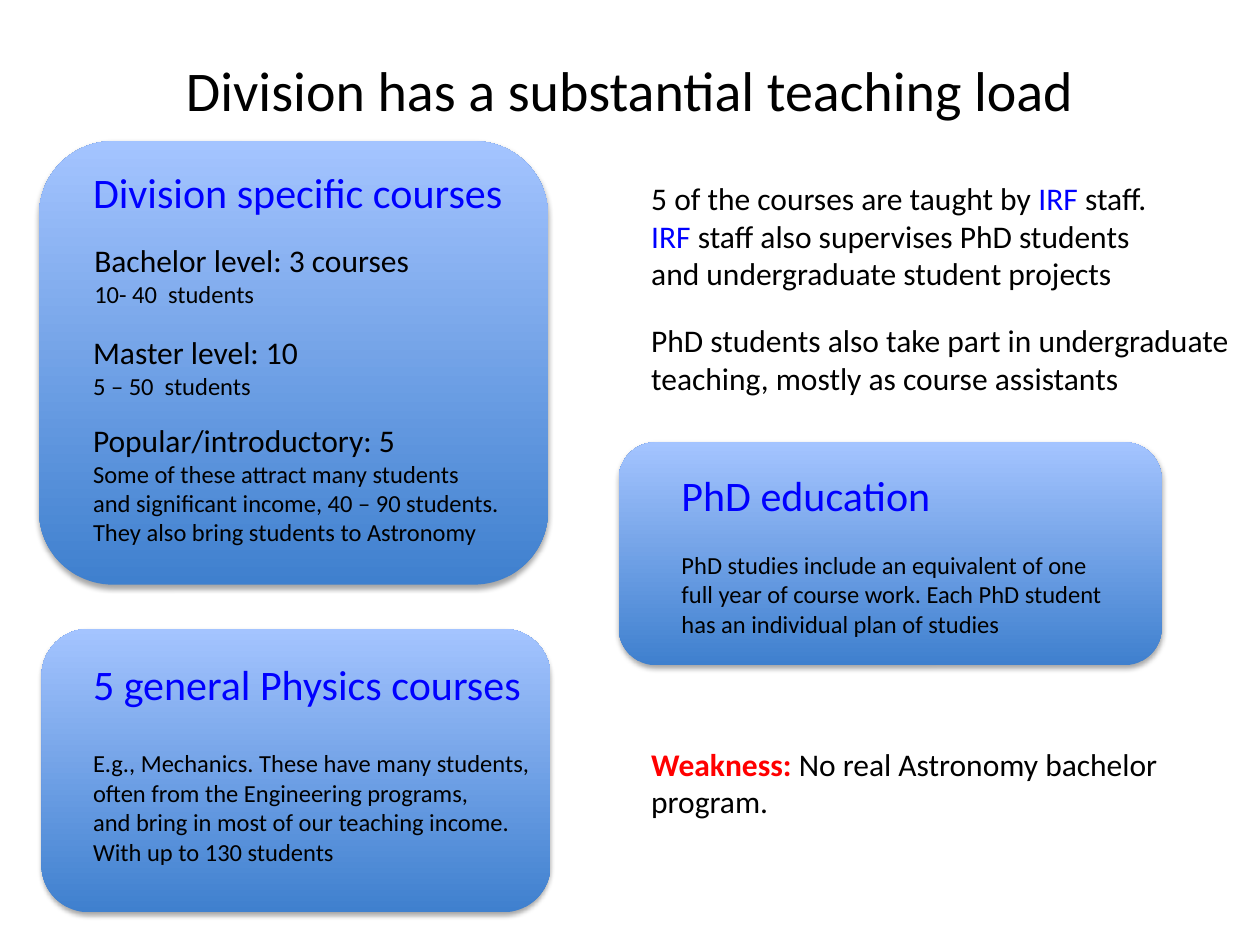
from lxml import etree
from pptx import Presentation
from pptx.dml.color import RGBColor
from pptx.enum.shapes import MSO_SHAPE
from pptx.enum.text import MSO_ANCHOR, MSO_AUTO_SIZE, PP_ALIGN
from pptx.oxml.ns import qn
from pptx.util import Inches, Pt

BLACK = RGBColor(0x00, 0x00, 0x00)
BLUE = RGBColor(0x00, 0x00, 0xFF)
RED = RGBColor(0xFF, 0x00, 0x00)
PANEL_BOTTOM = RGBColor(0x3F, 0x80, 0xCE)
PANEL_TOP = RGBColor(0xA4, 0xC4, 0xFF)

ROUNDED = MSO_SHAPE.ROUNDED_RECTANGLE
CALLOUT = MSO_SHAPE.RECTANGULAR_CALLOUT
MIDDLE = MSO_ANCHOR.MIDDLE
TOP = MSO_ANCHOR.TOP
GROW = MSO_AUTO_SIZE.SHAPE_TO_FIT_TEXT
CENTER = PP_ALIGN.CENTER
LEFT = PP_ALIGN.LEFT

FONT = "Calibri"
TITLE, HEADING, BODY, DETAIL = 32, 24, 18, 14
COLUMNS, ROWS = 100, 75
LEFT_TEXT, RIGHT_TEXT = 6.4, 50.7


class Deck:
    def __init__(self):
        self.prs = Presentation()
        self.prs.slide_width = Inches(10)
        self.prs.slide_height = Inches(7.5)
        self.slide = self.prs.slides.add_slide(self.prs.slide_layouts[6])

    def box(self, left, top, width, height):
        col = self.prs.slide_width / COLUMNS
        row = self.prs.slide_height / ROWS
        return [round(n) for n in (left * col, top * row, width * col, height * row)]

    def shape(self, kind, grid):
        sp = self.slide.shapes.add_shape(kind, *self.box(*grid))
        sp.fill.background()
        sp.line.fill.background()
        sp.shadow.inherit = False
        return sp

    def panel(self, *grid):
        sp = self.shape(ROUNDED, grid)
        sp.fill.gradient()
        sp.fill.gradient_angle = 90
        for stop, color in zip(sp.fill.gradient_stops, (PANEL_BOTTOM, PANEL_TOP)):
            stop.color.rgb = color
        effects = sp._element.spPr.find(qn("a:effectLst"))
        shadow = etree.SubElement(effects, qn("a:outerShdw"), blurRad=str(Pt(3.1)),
                                  dist=str(Pt(1.8)), dir="5400000", rotWithShape="0")
        color = etree.SubElement(shadow, qn("a:srgbClr"), val=str(BLACK))
        etree.SubElement(color, qn("a:alpha"), val="35000")

    def callout(self, grid, lines, wrap=False):
        self.fill_text(self.shape(CALLOUT, grid).text_frame, lines, wrap)

    def text(self, grid, lines, wrap=False, align=LEFT, anchor=TOP, gap=0):
        sp = self.slide.shapes.add_textbox(*self.box(*grid))
        self.fill_text(sp.text_frame, lines, wrap, align, anchor, gap)

    def fill_text(self, tf, lines, wrap, align=LEFT, anchor=TOP, gap=0):
        tf.word_wrap = wrap
        tf.auto_size = GROW
        tf.vertical_anchor = anchor
        for i, (size, *pieces) in enumerate(lines):
            p = tf.add_paragraph() if i else tf.paragraphs[0]
            p.alignment = align
            for words, color in pieces:
                self.run(p, words, size, color)
        tf.paragraphs[0].space_after = Pt(gap)

    def run(self, p, words, size, color):
        for i, part in enumerate(words.split("\v")):
            if i:
                p.add_line_break()
            r = p.add_run()
            r.text = part
            r.font.name = FONT
            r.font.size = Pt(size)
            r.font.bold = color == RED
            r.font.color.rgb = color


def plain(size, *lines, color=BLACK):
    return [(size, (line, color)) for line in lines]


def main():
    deck = Deck()
    deck.text((5, 3, 90, 8.2), plain(TITLE, "Division has a substantial teaching load"),
              wrap=True, align=CENTER, anchor=MIDDLE)

    deck.panel(3.1, 11.2, 40.4, 35.2)
    deck.callout((6.5, 18.63, 30, 6.4),
                 plain(BODY, "Bachelor level: 3 courses") + plain(DETAIL, "10- 40  students"),
                 wrap=True)
    deck.callout((LEFT_TEXT, 25.93, 18.5, 6.4),
                 plain(BODY, "Master level: 10") + plain(DETAIL, "5 – 50  students"))
    deck.callout((LEFT_TEXT, 32.9, 34.6, 11.1),
                 plain(BODY, "Popular/introductory: 5")
                 + plain(DETAIL, "Some of these attract many students",
                         "and significant income, 40 – 90 students.",
                         "They also bring students to Astronomy"))
    deck.callout((LEFT_TEXT, 12.7, 34.9, 5),
                 plain(HEADING, "Division specific courses", color=BLUE))

    deck.panel(3.3, 49.9, 40.4, 22.5)
    deck.text((LEFT_TEXT, 58.9, 37, 10.4),
              plain(DETAIL, "E.g., Mechanics. These have many students,",
                    "often from the Engineering programs,",
                    "and bring in most of our teaching income.",
                    "With up to 130 students"))

    deck.panel(49.1, 35.1, 43.1, 17.7)
    deck.text((RIGHT_TEXT, 13.7, 42.1, 10.1), [
        (BODY, ("5 of the courses are taught by ", BLACK), ("IRF", BLUE), (" staff.", BLACK)),
        (BODY, ("IRF", BLUE), (" staff also supervises PhD students", BLACK)),
        (BODY, ("and undergraduate student projects", BLACK)),
    ])
    deck.text((53.1, 36.8, 35.9, 14.5),
              plain(HEADING, "PhD education", color=BLUE)
              + plain(DETAIL, "PhD studies include an equivalent of one",
                      "full year of course work. Each PhD student",
                      "has an individual plan of studies"),
              gap=17)
    deck.text((RIGHT_TEXT, 25, 48.6, 7.1),
              plain(BODY, "PhD students also take part in undergraduate",
                    "teaching, mostly as course assistants"))

    deck.text((LEFT_TEXT, 51.8, 36.6, 8.1),
              plain(HEADING, "5 general Physics courses", color=BLUE))
    deck.text((RIGHT_TEXT, 58.6, 42.8, 7.1), [
        (BODY, ("Weakness:", RED), (" No real Astronomy bachelor\vprogram.", BLACK)),
    ])
    deck.prs.save("out.pptx")


if __name__ == "__main__":
    main()
